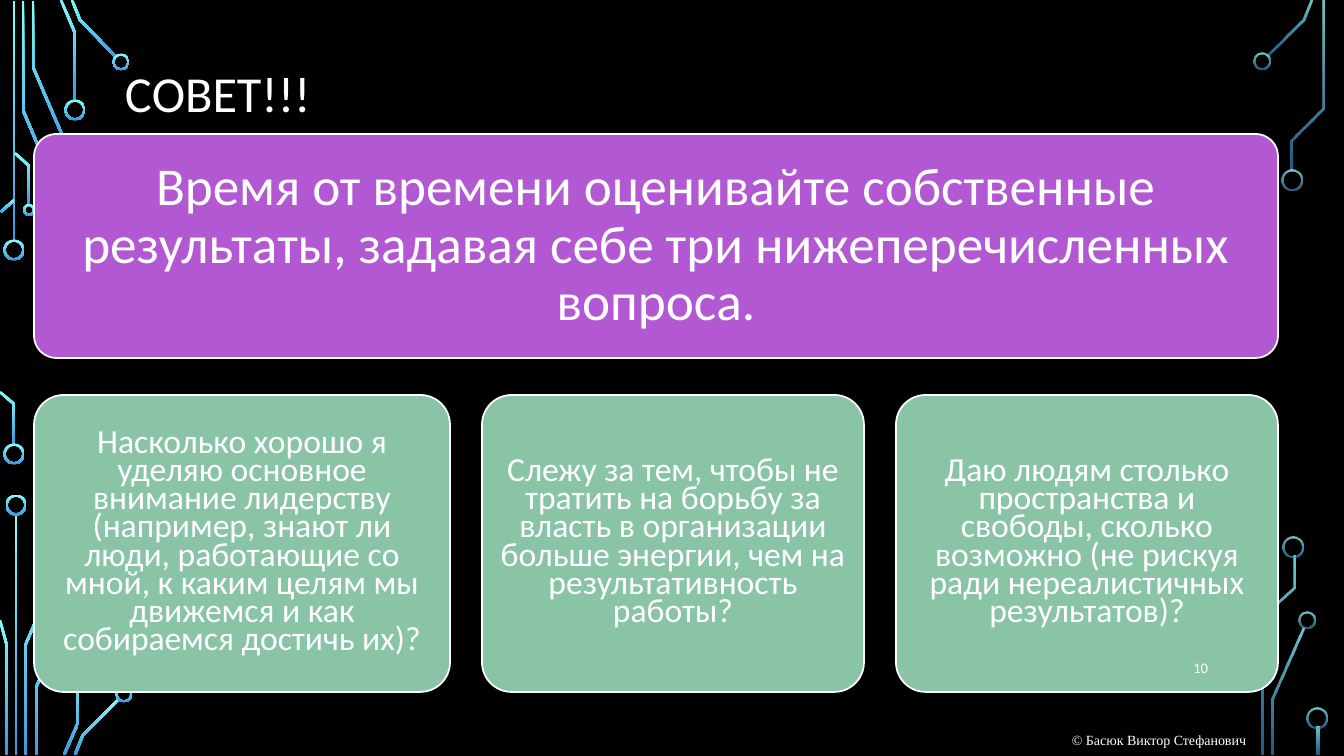
from math import hypot

from pptx import Presentation
from pptx.dml.color import RGBColor
from pptx.enum.shapes import MSO_SHAPE as Shape
from pptx.enum.text import MSO_ANCHOR as Anchor, PP_ALIGN as Align
from pptx.oxml.ns import qn
from pptx.util import Pt

PX = 914400 / 100.8
WIDTH, HEIGHT = 1344, 756

COLORS = {"back": "000000", "text": "FFFFFF", "banner": "B258D3", "card": "8AC4A7",
          "trace_top": "82FFFF", "trace_bottom": "3D97DE"}

TITLE = "СОВЕТ!!!"
ADVICE = "Время от времени оценивайте собственные результаты, задавая себе три нижеперечисленных вопроса."
QUESTIONS = [  # card width, question
    (416, "Насколько хорошо я уделяю основное внимание лидерству (например, знают ли люди, "
          "работающие со мной, к каким целям мы движемся и как собираемся достичь их)?"),
    (382, "Слежу за тем, чтобы не тратить на борьбу за власть в организации больше энергии, "
          "чем на результативность работы?"),
    (382, "Даю людям столько пространства и свободы, сколько возможно "
          "(не рискуя ради нереалистичных результатов)?"),
]
PAGE_NUMBER = "10"
COPYRIGHT = "© Басюк Виктор Стефанович"

# Circuit decoration: centre lines of the traces, then rings as (centre x, centre y, diameter)
LEFT_TRACES = [
    [(14, 1), (14, 241)],
    [(23, 1), (23, 110), (61, 200)],
    [(33, 1), (33, 67), (72, 158)],
    [(61, 0), (75, 33), (75, 101)],
    [(72, 0), (80, 20), (116, 57)],
    [(14, 200), (1, 212)],
    [(0, 392), (14, 404), (14, 445)],
    [(15, 153), (29, 166), (29, 205)],
    [(16, 514), (16, 755)],
    [(25, 755), (25, 646), (64, 556)],
    [(7, 755), (7, 646), (0, 620)],
    [(36, 755), (36, 688), (74, 598)],
    [(64, 755), (78, 723), (78, 655)],
    [(75, 755), (83, 735), (119, 699)],
]
LEFT_RINGS = [(14, 250, 21), (14, 454, 21), (75, 110, 21), (121, 62, 17), (29, 210, 12),
              (16, 505, 21), (124, 694, 17)]
RIGHT_TRACES = [
    [(1267, 56), (1303, 20), (1311, 0)],
    [(1273, 755), (1273, 699), (1303, 628)],
    [(1292, 170), (1292, 140), (1323, 108), (1323, 1)],
    [(1294, 556), (1294, 588), (1263, 618), (1263, 755)],
    [(1318, 727), (1318, 755)],
]
RIGHT_RINGS = [(1262, 61, 17), (1292, 180, 21), (1307, 620, 17), (1293, 547, 21), (1317, 718, 21)]
TRACE_WIDTH = 2.5
CIRCUITS = [  # traces, rings, opacity at the top and bottom of each part
    (LEFT_TRACES, LEFT_RINGS, (100, 100)),
    (RIGHT_TRACES, RIGHT_RINGS, (80, 60)),
]

MARGIN, GAP = 34, 32
BANNER_TOP, BANNER_HEIGHT = 134, 224
CARD_TOP, CARD_HEIGHT = 395, 297


def emu(px):
    return round(px * PX)


def rgb(name):
    return RGBColor.from_string(COLORS[name])


def paint_trace(shape, opacities):
    shape.shadow.inherit = False
    shape.line.fill.background()
    shape.fill.gradient()
    shape.fill.gradient_angle = 270
    names = ("trace_top", "trace_bottom")
    for stop, name, position in zip(shape.fill.gradient_stops, names, (0, 1)):
        stop.color.rgb = rgb(name)
        stop.position = position
    for color, opacity in zip(shape._element.iter(qn("a:srgbClr")), opacities):
        if opacity < 100:
            color.makeelement(qn("a:alpha"), {})
            alpha = color.makeelement(qn("a:alpha"), {"val": str(opacity * 1000)})
            color.append(alpha)


def ribbon(points):
    """Outline of a band of TRACE_WIDTH around a centre line, with mitred corners."""
    normals = []
    for (x1, y1), (x2, y2) in zip(points, points[1:]):
        length = hypot(x2 - x1, y2 - y1)
        normals.append(((y1 - y2) / length, (x2 - x1) / length))
    one_side, other_side = [], []
    before_after = zip(normals[:1] + normals, normals + normals[-1:])
    for (x, y), ((ax, ay), (bx, by)) in zip(points, before_after):
        reach = TRACE_WIDTH / 2 / (1 + ax * bx + ay * by)
        dx, dy = (ax + bx) * reach, (ay + by) * reach
        one_side.append((emu(x + dx), emu(y + dy)))
        other_side.append((emu(x - dx), emu(y - dy)))
    return one_side + other_side[::-1]


def add_trace(points, opacities):
    start, *rest = ribbon(points)
    builder = page.shapes.build_freeform(*start, scale=1.0)
    builder.add_line_segments(rest, close=True)
    paint_trace(builder.convert_to_shape(), opacities)


def add_ring(x, y, size, opacities):
    box = (x - size / 2, y - size / 2, size, size)
    ring = page.shapes.add_shape(Shape.DONUT, *map(emu, box))
    ring.adjustments[0] = 2 / size
    paint_trace(ring, opacities)


def write(shape, text, size, align=Align.LEFT, anchor=Anchor.MIDDLE, spacing=1.0, font="Calibri"):
    frame = shape.text_frame
    frame.word_wrap = True
    frame.vertical_anchor = anchor
    para = frame.paragraphs[0]
    para.text = text
    para.alignment = align
    para.line_spacing = spacing
    para.font.size = Pt(size)
    para.font.name = font
    para.font.color.rgb = rgb("text")


def add_label(box, text, size, **style):
    write(page.shapes.add_textbox(*map(emu, box)), text, size, **style)


def add_card(box, color, text, size, spacing, inset):
    card = page.shapes.add_shape(Shape.ROUNDED_RECTANGLE, *map(emu, box))
    card.adjustments[0] = 0.1
    card.shadow.inherit = False
    card.fill.solid()
    card.fill.fore_color.rgb = rgb(color)
    card.line.color.rgb = rgb("text")
    card.line.width = Pt(1.25)
    frame = card.text_frame
    frame.margin_left = frame.margin_right = emu(inset)
    frame.margin_top = frame.margin_bottom = emu(inset)
    write(card, text, size, align=Align.CENTER, spacing=spacing)


deck = Presentation()
deck.slide_width, deck.slide_height = emu(WIDTH), emu(HEIGHT)
page = deck.slides.add_slide(deck.slide_layouts[6])
page.background.fill.solid()
page.background.fill.fore_color.rgb = rgb("back")

for traces, rings, opacities in CIRCUITS:
    for points in traces:
        add_trace(points, opacities)
    for ring in rings:
        add_ring(*ring, opacities)

add_label((115, 15, 1092, 163), TITLE, 36, spacing=0.9)

banner_width = sum(width for width, _ in QUESTIONS) + GAP * (len(QUESTIONS) - 1)
add_card((MARGIN, BANNER_TOP, banner_width, BANNER_HEIGHT), "banner", ADVICE, 38, 0.9, 16)

left = MARGIN
for width, question in QUESTIONS:
    add_card((left, CARD_TOP, width, CARD_HEIGHT), "card", question, 24, 0.7, 10)
    left += width + GAP

add_label((1133, 648, 85, 40), PAGE_NUMBER, 10.5, align=Align.RIGHT)
add_label((1062, 727, 205, 27), COPYRIGHT, 10, anchor=Anchor.TOP, font="Times New Roman")

deck.save("out.pptx")
